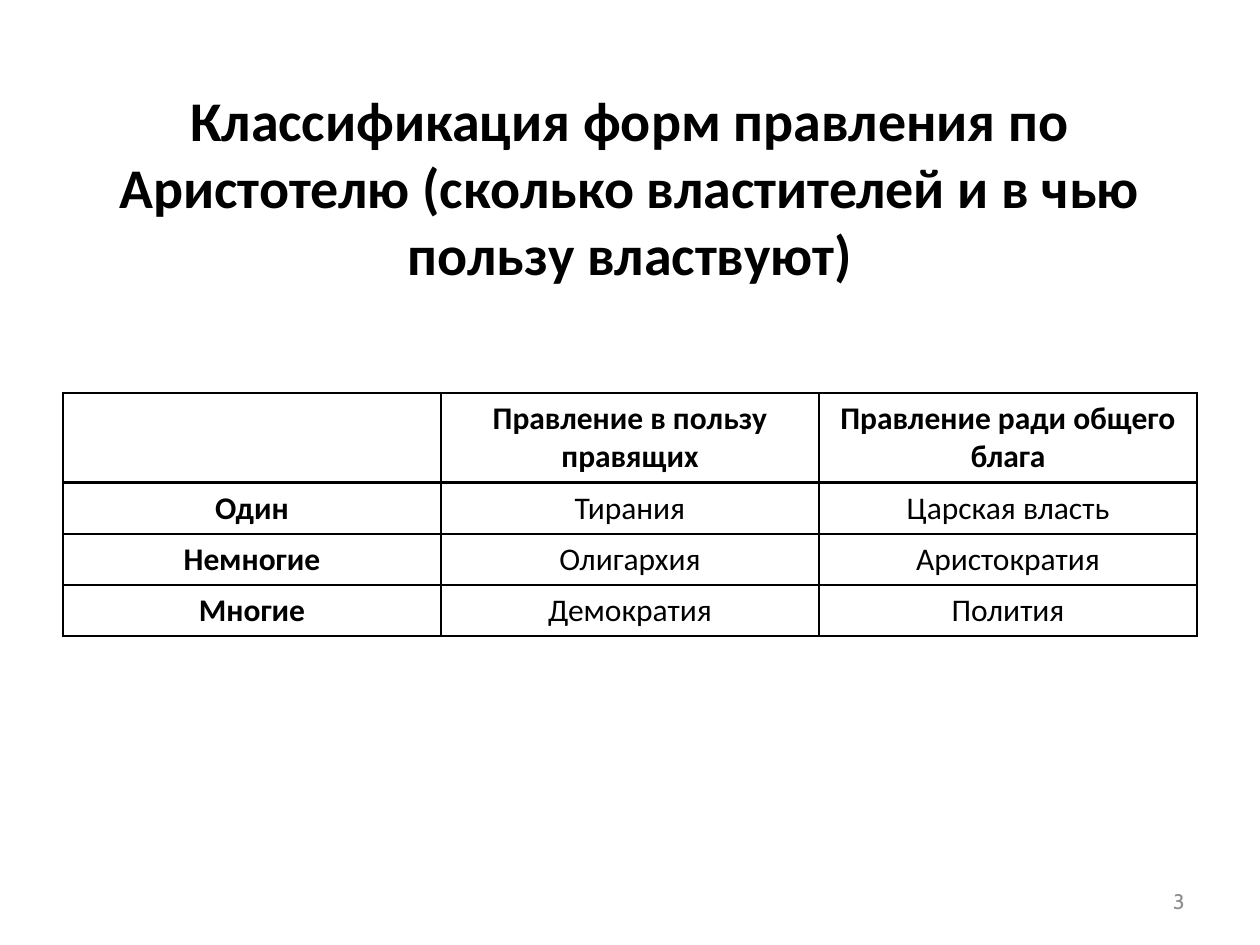
import lxml.etree
import pptx
import pptx.dml.color
import pptx.enum.text
import pptx.oxml.ns
import pptx.util

PX = 914400 / 126
BLACK = pptx.dml.color.RGBColor(0x00, 0x00, 0x00)
GRAY = pptx.dml.color.RGBColor(0x8C, 0x8C, 0x8C)
ALIGN = pptx.enum.text.PP_ALIGN
MIDDLE = pptx.enum.text.MSO_ANCHOR.MIDDLE

TITLE = "Классификация форм правления по Аристотелю (сколько властителей и в чью пользу властвуют)"
ROWS = [
    ["", "Правление в пользу правящих", "Правление ради общего блага"],
    ["Один", "Тирания", "Царская власть"],
    ["Немногие", "Олигархия", "Аристократия"],
    ["Многие", "Демократия", "Полития"],
]
HEAD_H, ROW_H = 90, 51


def px(n):
    return pptx.util.Emu(round(n * PX))


def add_run(p, text, size, font, color, align, bold=False):
    p.alignment = align
    r = p.add_run()
    r.text = text
    r.font.size = pptx.util.Pt(size)
    r.font.name = font
    r.font.bold = bold
    r.font.color.rgb = color


def add_text(s, box, text, size, font, color, align, bold=False):
    sp = s.shapes.add_textbox(*map(px, box))
    tf = sp.text_frame
    tf.word_wrap = True
    tf.vertical_anchor = MIDDLE
    add_run(tf.paragraphs[0], text, size, font, color, align, bold)


def set_border(cell, side, width):
    qn = pptx.oxml.ns.qn
    ln = lxml.etree.SubElement(cell._tc.get_or_add_tcPr(), qn(f"a:ln{side}"),
                               w=str(pptx.util.Pt(width)))
    fill = lxml.etree.SubElement(ln, qn("a:solidFill"))
    lxml.etree.SubElement(fill, qn("a:srgbClr"), val=str(BLACK))


def add_forms_table(s, box):
    x, y, w, h = map(px, box)
    table = s.shapes.add_table(len(ROWS), len(ROWS[0]), x, y, w, h).table
    table.first_row = False
    table.horz_banding = False
    for i, texts in enumerate(ROWS):
        table.rows[i].height = px(ROW_H if i else HEAD_H)
        for j, text in enumerate(texts):
            cell = table.cell(i, j)
            for side in "LRTB":
                under_head = (i, side) in [(0, "B"), (1, "T")]
                set_border(cell, side, 2 if under_head else 1)
            cell.fill.background()
            if text:
                add_run(cell.text_frame.paragraphs[0], text, 18, "Calibri", BLACK,
                        ALIGN.CENTER, bold=i == 0 or j == 0)


def main():
    prs = pptx.Presentation()
    prs.slide_width, prs.slide_height = px(1260), px(945)
    s = prs.slides.add_slide(prs.slide_layouts[6])
    add_text(s, (63, 38, 1134, 296), TITLE, 32, "Calibri", BLACK, ALIGN.CENTER, bold=True)
    add_text(s, (903, 876, 294, 50), "3", 12, "Cabin", GRAY, ALIGN.RIGHT)
    add_forms_table(s, (63, 393, 1134, HEAD_H + 3 * ROW_H))
    prs.save("out.pptx")


if __name__ == "__main__":
    main()
